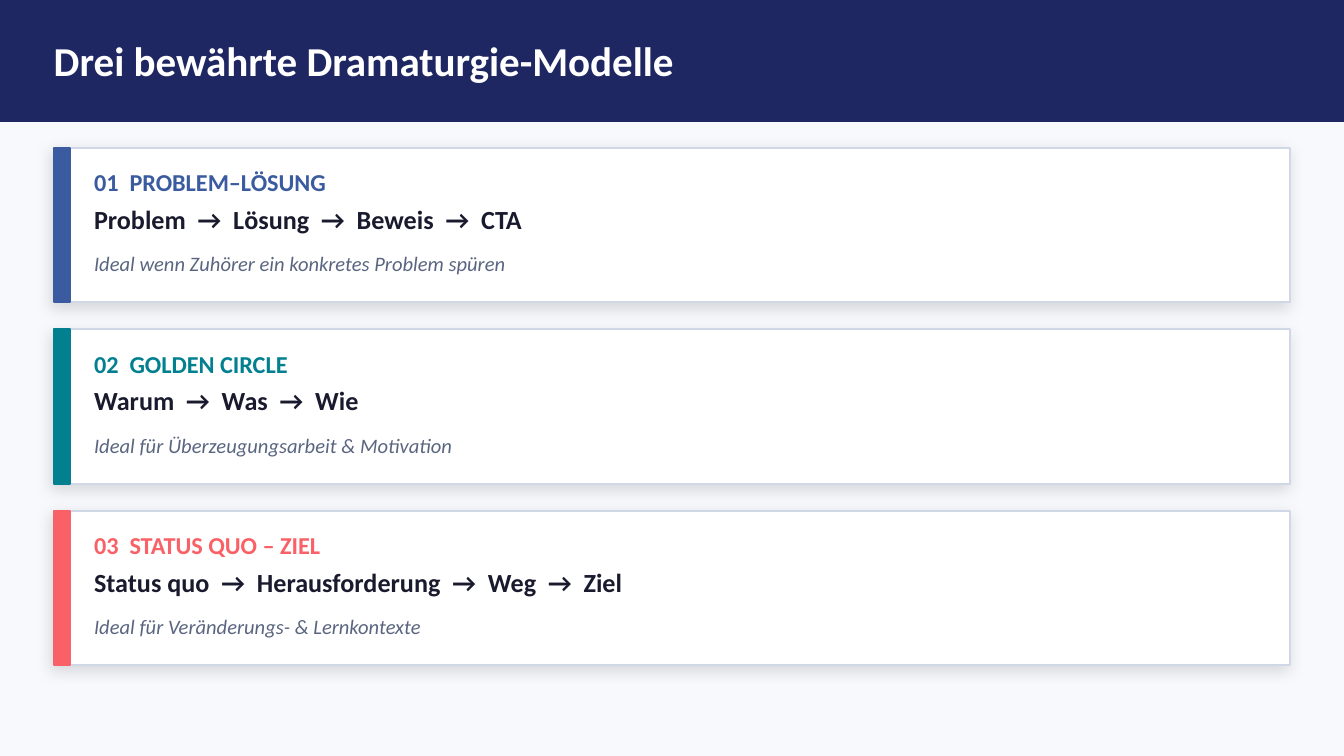
from lxml.etree import SubElement as Sub
from pptx import Presentation
from pptx.dml.color import RGBColor
from pptx.enum.shapes import MSO_SHAPE as Shape
from pptx.enum.text import MSO_ANCHOR as Anchor
from pptx.oxml.ns import qn
from pptx.util import Inches, Pt

NAVY, WHITE, INK, GREY = "1E2761", "FFFFFF", "1A1A2E", "5A6580"
EDGE, BACK = "D0D8E8", "F7F9FC"

MODELS = [
    ("3A5BA0", "PROBLEM–LÖSUNG", ["Problem", "Lösung", "Beweis", "CTA"],
     "Ideal wenn Zuhörer ein konkretes Problem spüren"),
    ("028090", "GOLDEN CIRCLE", ["Warum", "Was", "Wie"],
     "Ideal für Überzeugungsarbeit & Motivation"),
    ("F96167", "STATUS QUO – ZIEL",
     ["Status quo", "Herausforderung", "Weg", "Ziel"],
     "Ideal für Veränderungs- & Lernkontexte"),
]


def rgb(code):
    return RGBColor.from_string(code)


class Deck:
    font = "Calibri"

    def __init__(self, width, height):
        self.prs = Presentation()
        self.prs.slide_width = Inches(width)
        self.prs.slide_height = Inches(height)
        self.slide = self.prs.slides.add_slide(self.prs.slide_layouts[6])
        fill = self.slide.background.fill
        fill.solid()
        fill.fore_color.rgb = rgb(BACK)

    def rect(self, x, y, w, h, fill, line):
        box = self.slide.shapes.add_shape(
            Shape.RECTANGLE, Inches(x), Inches(y), Inches(w), Inches(h))
        box.shadow.inherit = False
        box.fill.solid()
        box.fill.fore_color.rgb = rgb(fill)
        box.line.color.rgb = rgb(line)
        box.line.width = Pt(1)
        return box

    def shade(self, box):
        """Give the box a soft outer shadow."""
        effects = box._element.spPr.find(qn("a:effectLst"))
        outer = Sub(effects, qn("a:outerShdw"), blurRad=str(Pt(8)),
                    dist=str(Pt(3)), dir=str(135 * 60000),
                    algn="bl", rotWithShape="0")
        tint = Sub(outer, qn("a:srgbClr"), val="000000")
        Sub(tint, qn("a:alpha"), val="12000")

    def text(self, x, y, w, h, words, size, color, bold=False, italic=False):
        box = self.slide.shapes.add_textbox(
            Inches(x), Inches(y), Inches(w), Inches(h))
        frame = box.text_frame
        frame.word_wrap = True
        frame.vertical_anchor = Anchor.MIDDLE
        frame.margin_left = frame.margin_right = 0
        frame.margin_top = frame.margin_bottom = 0
        frame.text = words
        font = frame.paragraphs[0].runs[0].font
        font.name, font.size = self.font, Pt(size)
        font.bold, font.italic = bold, italic
        font.color.rgb = rgb(color)

    def card(self, y, num, color, name, steps, use):
        self.shade(self.rect(0.4, y, 9.2, 1.15, WHITE, EDGE))
        self.rect(0.4, y, 0.12, 1.15, color, color)
        self.text(0.7, y + 0.08, 9, 0.35, f"{num:02}  {name}",
                  13, color, bold=True)
        self.text(0.7, y + 0.38, 5.8, 0.3, "  →  ".join(steps),
                  14, INK, bold=True)
        self.text(0.7, y + 0.72, 8.7, 0.28, use, 11, GREY, italic=True)


def main():
    deck = Deck(10, 10 * 9 / 16)
    deck.rect(0, 0, 10, 0.9, NAVY, NAVY)
    deck.text(0.4, 0, 9, 0.9, "Drei bewährte Dramaturgie-Modelle",
              22, WHITE, bold=True)
    for i, model in enumerate(MODELS):
        deck.card(1.1 + 1.35 * i, i + 1, *model)
    deck.prs.save("out.pptx")


if __name__ == "__main__":
    main()
